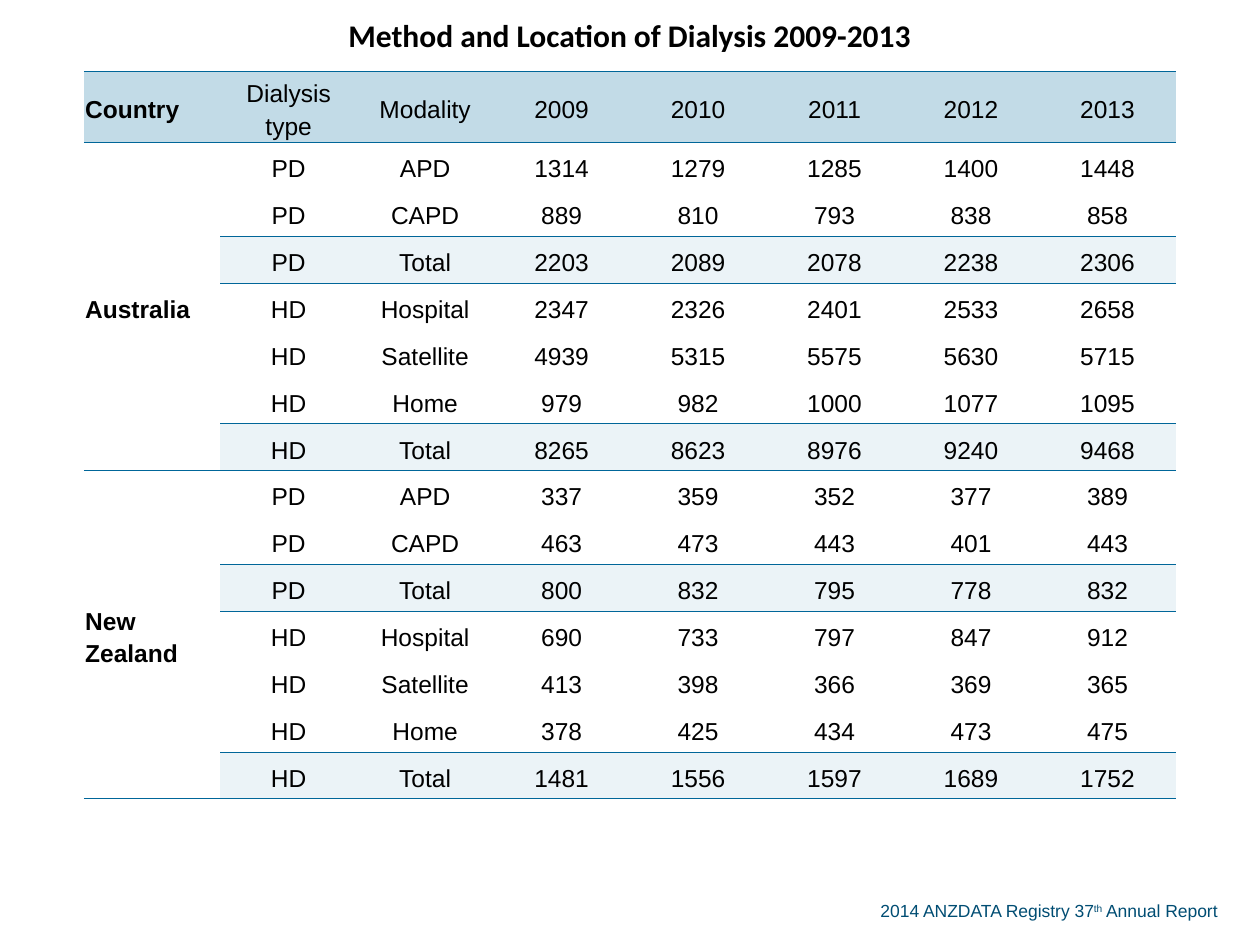
"""Build the slide on method and location of dialysis, 2009-2013."""
import dataclasses

import lxml.etree
import pptx
import pptx.dml.color
import pptx.enum.text
import pptx.oxml.ns
import pptx.util

Pt = pptx.util.Pt
RGB = pptx.dml.color.RGBColor
ALIGN = pptx.enum.text.PP_ALIGN
qn = pptx.oxml.ns.qn


@dataclasses.dataclass(frozen=True)
class Theme:
    text: str = "000000"
    source: str = "004D73"
    rule: str = "006699"
    header: str = "C2DBE7"
    total: str = "EBF3F7"
    title_font: str = "Calibri"
    body_font: str = "Arial"
    title_size: int = 18
    body_size: int = 14
    source_size: int = 10


THEME = Theme()
NO_GRID_STYLE = "{2D5ABB26-0587-4C30-8999-92F81FD0307C}"
TITLE = "Method and Location of Dialysis 2009-2013"
HEADER = ["Country", "Dialysis type", "Modality", 2009, 2010, 2011, 2012, 2013]
MODALITIES = [("PD", "APD"), ("PD", "CAPD"), ("PD", "Total"), ("HD", "Hospital"),
              ("HD", "Satellite"), ("HD", "Home"), ("HD", "Total")]
COUNTS = {
    "Australia": [
        (1314, 1279, 1285, 1400, 1448),
        (889, 810, 793, 838, 858),
        (2203, 2089, 2078, 2238, 2306),
        (2347, 2326, 2401, 2533, 2658),
        (4939, 5315, 5575, 5630, 5715),
        (979, 982, 1000, 1077, 1095),
        (8265, 8623, 8976, 9240, 9468),
    ],
    "New Zealand": [
        (337, 359, 352, 377, 389),
        (463, 473, 443, 401, 443),
        (800, 832, 795, 778, 832),
        (690, 733, 797, 847, 912),
        (413, 398, 366, 369, 365),
        (378, 425, 434, 473, 475),
        (1481, 1556, 1597, 1689, 1752),
    ],
}
TITLE_HEIGHT, HEADER_HEIGHT, ROW_HEIGHT, COLUMN_WIDTH = 40.8, 36.8, 26.8, 78


def set_font(font, name, size, color, bold=False):
    """Apply one typeface, size, colour and weight."""
    font.name, font.size, font.bold = name, Pt(size), bold
    font.color.rgb = RGB.from_string(color)


def fill_cell(cell, text, align=ALIGN.CENTER, fill=None, bold=False):
    """Write a body cell and return its paragraph."""
    cell.vertical_anchor = pptx.enum.text.MSO_ANCHOR.MIDDLE
    cell.margin_left = cell.margin_right = cell.margin_top = Pt(0.7)
    cell.margin_bottom = Pt(0)
    if fill:
        cell.fill.solid()
        cell.fill.fore_color.rgb = RGB.from_string(fill)
    else:
        cell.fill.background()
    p = cell.text_frame.paragraphs[0]
    p.text, p.alignment = str(text), align
    p.line_spacing, p.space_after = 1.19, Pt(14)
    set_font(p.font, THEME.body_font, THEME.body_size, THEME.text, bold)
    return p


def rule_below(cell):
    """Draw a thin rule along the bottom of a cell."""
    ln = lxml.etree.Element(qn("a:lnB"), w=str(Pt(0.5)))
    fill = lxml.etree.SubElement(ln, qn("a:solidFill"))
    lxml.etree.SubElement(fill, qn("a:srgbClr"), val=THEME.rule)
    cell._tc.get_or_add_tcPr().insert(0, ln)


def add_grid(slide, rows, columns):
    """Add an unstyled table with the slide's row heights and column widths."""
    heights = [TITLE_HEIGHT, HEADER_HEIGHT] + [ROW_HEIGHT] * (rows - 2)
    frame = slide.shapes.add_table(rows, columns, Pt(48), Pt(0),
                                   Pt(columns * COLUMN_WIDTH), Pt(sum(heights)))
    table = frame.table
    table.first_row = table.horz_banding = False
    table._tbl.tblPr.find(qn("a:tableStyleId")).text = NO_GRID_STYLE
    for row, height in zip(table.rows, heights):
        row.height = Pt(height)
    return table


def fill_headings(table):
    """Write the title row and the column headings."""
    table.cell(0, 0).merge(table.cell(0, len(HEADER) - 1))
    p = fill_cell(table.cell(0, 0), TITLE)
    p.line_spacing, p.space_after = None, None
    set_font(p.font, THEME.title_font, THEME.title_size, THEME.text, True)
    for c, text in enumerate(HEADER):
        first = c == 0
        fill_cell(table.cell(1, c), text, ALIGN.LEFT if first else ALIGN.CENTER,
                  THEME.header, first)
        rule_below(table.cell(0, c))
        rule_below(table.cell(1, c))


def fill_country(table, top, country, counts):
    """Write one country's block of rows, with rules around its totals."""
    bottom = top + len(counts) - 1
    table.cell(top, 0).merge(table.cell(bottom, 0))
    fill_cell(table.cell(top, 0), country, ALIGN.LEFT, bold=True)
    rule_below(table.cell(top, 0))
    rule_below(table.cell(bottom, 0))
    for r, (labels, values) in enumerate(zip(MODALITIES, counts), top):
        fill = THEME.total if labels[1] == "Total" else None
        for c, text in enumerate(labels + values, 1):
            fill_cell(table.cell(r, c), text, fill=fill)
            if labels[1] in ("CAPD", "Home", "Total"):
                rule_below(table.cell(r, c))


def add_source(slide):
    """Add the report credit at the bottom right."""
    sp = slide.shapes.add_textbox(Pt(496), Pt(511), Pt(215), Pt(19.4))
    sp.text_frame.word_wrap = True
    p = sp.text_frame.paragraphs[0]
    set_font(p.font, THEME.body_font, THEME.source_size, THEME.source)
    for text in ("2014 ANZDATA Registry 37", "th", " Annual Report"):
        r = p.add_run()
        r.text = text
        if text == "th":
            r._r.get_or_add_rPr().set("baseline", "30000")


def main():
    """Build and save the slide."""
    prs = pptx.Presentation()
    prs.slide_width, prs.slide_height = Pt(720), Pt(540)
    slide = prs.slides.add_slide(prs.slide_layouts[6])
    add_source(slide)
    table = add_grid(slide, 2 + len(COUNTS) * len(MODALITIES), len(HEADER))
    fill_headings(table)
    for i, (country, counts) in enumerate(COUNTS.items()):
        fill_country(table, 2 + i * len(MODALITIES), country, counts)
    prs.save("out.pptx")


if __name__ == "__main__":
    main()
